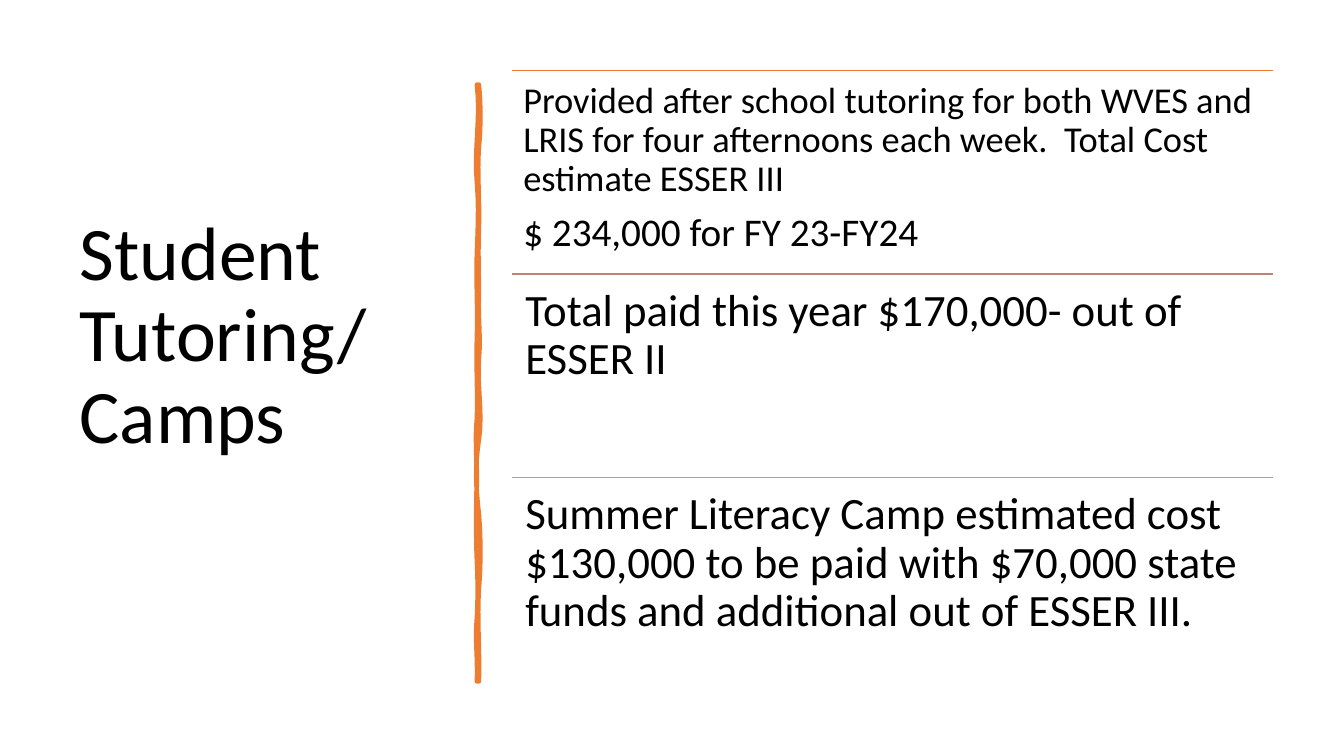
from collections import namedtuple
from dataclasses import dataclass

from lxml.etree import SubElement
from pptx import Presentation
from pptx.dml.color import RGBColor
from pptx.enum.shapes import MSO_CONNECTOR as Connector
from pptx.enum.text import MSO_ANCHOR as Anchor, PP_ALIGN as Align
from pptx.oxml.ns import qn
from pptx.util import Inches, Pt

Box = namedtuple("Box", "left top width height")
Row = namedtuple("Row", "rule inset lines")


@dataclass(frozen=True)
class Theme:
    """Colours and type sizes of the slide."""
    font: str = "Calibri"
    ink: str = "000000"
    accent: str = "ED7D31"
    rust: str = "C48170"
    grey: str = "A5A5A5"
    title: int = 54
    detail: int = 26
    amount: int = 28
    body: int = 32
    stroke: float = 3.25
    rule: float = 1


THEME = Theme()

ROWS = [
    Row(THEME.accent, 0.11, [
        ("Provided after school tutoring for both WVES and LRIS for four "
         "afternoons each week.  Total Cost estimate ESSER III", THEME.detail),
        ("$ 234,000 for FY 23-FY24", THEME.amount)]),
    Row(THEME.rust, 0.13, [
        ("Total paid this year $170,000- out of ESSER II", THEME.body)]),
    Row(THEME.grey, 0.13, [
        ("Summer Literacy Camp estimated cost $130,000 to be paid with "
         "$70,000 state funds and additional out of ESSER III.", THEME.body)]),
]

RIGHT_EDGE = [(0.02, 0.02, 0.62), (-0.02, 0.01, 1.42), (-0.01, 0, 2.1),
              (-0.01, 0.02, 2.72), (-0.02, 0.04, 3.52), (-0.04, -0.03, 4.26),
              (0.02, 0.02, 5), (-0.02, 0.01, 5.92)]
LEFT_EDGE = [(0.01, -0.02, 5.29), (0.01, 0.01, 4.73), (-0.01, -0.01, 3.93),
             (0, -0.02, 3.31), (0.01, -0.01, 2.51), (0.01, -0.01, 1.66),
             (0.01, 0.02, 0.97), (-0.03, 0.04, 0)]


def format_paragraph(para, size):
    """Set the typeface, size, colour and spacing of a paragraph."""
    para.alignment = Align.LEFT
    para.line_spacing = 0.9
    para.font.name = THEME.font
    para.font.size = Pt(size)
    para.font.color.rgb = RGBColor.from_string(THEME.ink)


def add_title(page, box):
    """Place the title, raised by half a line within its box."""
    title = page.shapes.title
    title.left, title.top, title.width, title.height = map(Inches, box)
    frame = title.text_frame
    frame.word_wrap = True
    frame.vertical_anchor = Anchor.MIDDLE
    frame.margin_bottom = Inches(0.87)
    frame.text = "Student Tutoring/ Camps"
    format_paragraph(frame.paragraphs[0], THEME.title)


def wavy_edge(x, start, bends, steps=8):
    """Return points along a vertical edge that sways around x."""
    points = []
    for first, second, end in bends:
        for step in range(1, steps + 1):
            t = step / steps
            sway = 3 * t * (1 - t) * ((1 - t) * first + t * second)
            points.append((Inches(x + sway), Inches(start + t * (end - start))))
        start = end
    return points


def add_brush_stroke(page, box):
    """Draw the hand-drawn vertical divider."""
    right = box.left + box.width
    bottom = box.top + box.height
    builder = page.shapes.build_freeform(Inches(right), Inches(box.top))
    edges = [(right, 0, RIGHT_EDGE), (box.left, box.height, LEFT_EDGE)]
    for x, start, bends in edges:
        points = [(px, py + Inches(box.top)) for px, py in wavy_edge(x, start, bends)]
        builder.add_line_segments(points, close=False)
        if x == right:
            builder.add_line_segments([(Inches(box.left), Inches(bottom))], close=False)
    builder.add_line_segments([(Inches(right), Inches(box.top))], close=True)
    stroke = builder.convert_to_shape()
    stroke.shadow.inherit = False
    stroke.fill.solid()
    stroke.fill.fore_color.rgb = RGBColor.from_string(THEME.accent)
    stroke.line.color.rgb = RGBColor.from_string(THEME.accent)
    stroke.line.width = Pt(THEME.stroke)


def add_row(page, box, row):
    """Draw a rule with its paragraphs below it."""
    left, top, width, height = map(Inches, box)
    rule = page.shapes.add_connector(Connector.STRAIGHT, left, top, left + width, top)
    rule.line.color.rgb = RGBColor.from_string(row.rule)
    rule.line.width = Pt(THEME.rule)
    SubElement(rule._element.spPr, qn("a:effectLst"))
    frame = page.shapes.add_textbox(left, top, width, height).text_frame
    frame.word_wrap = True
    frame.margin_left = frame.margin_right = Inches(row.inset)
    frame.margin_top = frame.margin_bottom = Inches(row.inset)
    for index, (text, size) in enumerate(row.lines):
        para = frame.add_paragraph() if index else frame.paragraphs[0]
        para.text = text
        format_paragraph(para, size)
        para.space_after = Pt(round(size * 0.35))


def add_rows(page, box):
    """Divide the box evenly among the funding rows."""
    height = box.height / len(ROWS)
    for index, row in enumerate(ROWS):
        add_row(page, Box(box.left, box.top + index * height, box.width, height), row)


def main():
    """Build and save the slide."""
    deck = Presentation()
    deck.slide_width, deck.slide_height = Inches(13.33), Inches(7.5)
    page = deck.slides.add_slide(deck.slide_layouts[5])
    add_title(page, Box(0.69, 0.7, 3.74, 6.11))
    add_brush_stroke(page, Box(4.73, 0.84, 0.02, 5.92))
    add_rows(page, Box(5.08, 0.7, 7.55, 6.06))
    deck.save("out.pptx")


if __name__ == "__main__":
    main()
